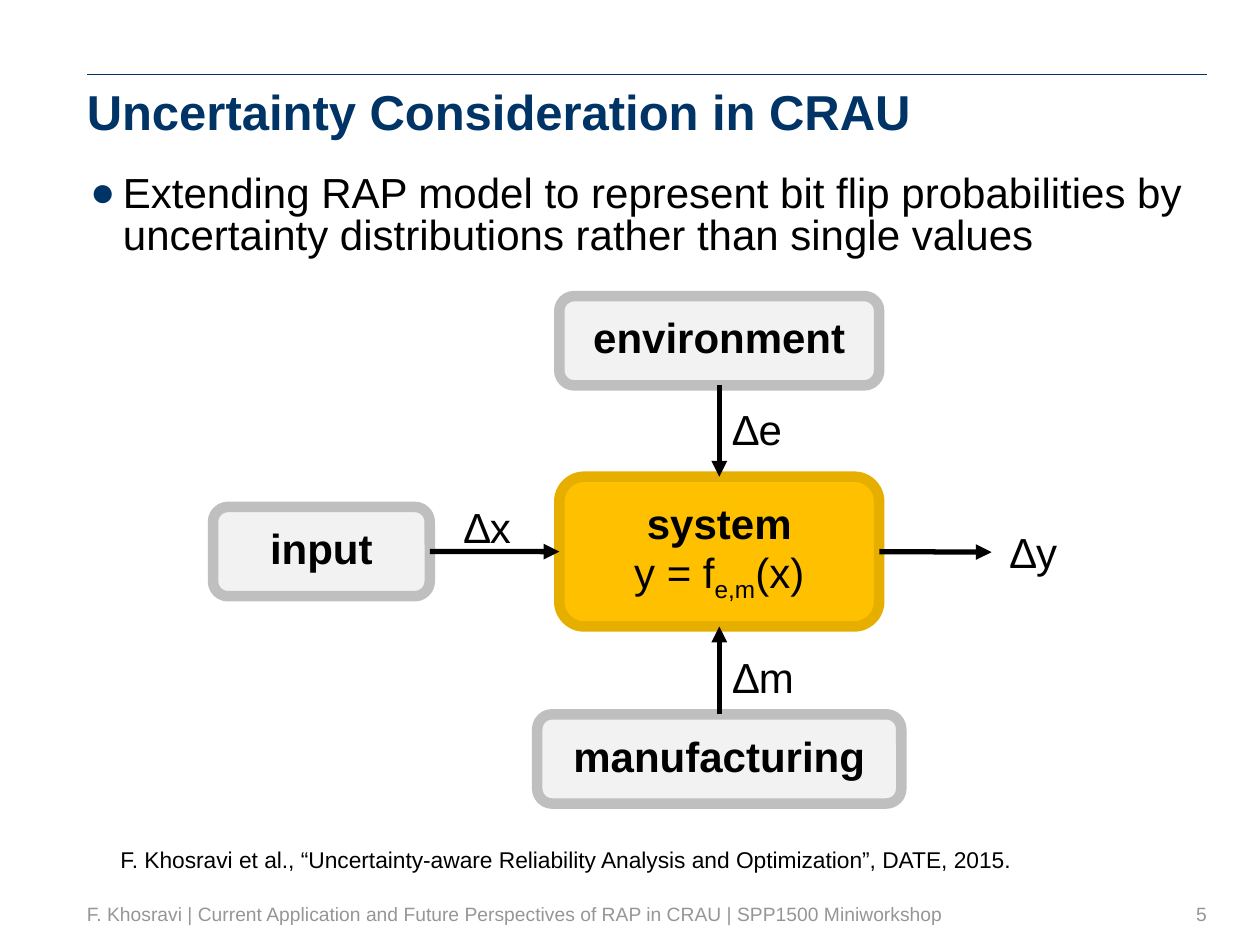
from lxml import etree
from pptx import Presentation
from pptx.dml.color import RGBColor
from pptx.enum.shapes import MSO_CONNECTOR, MSO_SHAPE
from pptx.enum.text import MSO_ANCHOR, PP_ALIGN
from pptx.oxml.ns import qn
from pptx.util import Cm, Pt

STRAIGHT = MSO_CONNECTOR.STRAIGHT
ROUNDED = MSO_SHAPE.ROUNDED_RECTANGLE
TOP, MIDDLE = MSO_ANCHOR.TOP, MSO_ANCHOR.MIDDLE
LEFT, CENTER, RIGHT = PP_ALIGN.LEFT, PP_ALIGN.CENTER, PP_ALIGN.RIGHT
SITES = {"top": 0, "left": 1, "bottom": 2, "right": 3}

COLORS = {
    "navy": "003366", "black": "000000", "footer": "969696",
    "gold": "FFC000", "gold edge": "E6AF00",
    "light": "F2F2F2", "light edge": "BFBFBF",
}

TITLE = "Uncertainty Consideration in CRAU"
BULLET = ("Extending RAP model to represent bit flip probabilities by "
          "uncertainty distributions rather than single values")
REFERENCE = ("F. Khosravi et al., “Uncertainty-aware Reliability Analysis "
             "and Optimization”, DATE, 2015.")
FOOTER = ("F. Khosravi | Current Application and Future Perspectives of RAP "
          "in CRAU | SPP1500 Miniworkshop")
PAGE_NUMBER = "5"

# Diagram in centimetres: centre x, centre y, width, height, colour
BOXES = {
    "environment": (14.5, 6.87, 6.45, 1.8, "light"),
    "system": (14.5, 11.12, 6.45, 3.02, "gold"),
    "input": (6.48, 11.12, 4.37, 1.8, "light"),
    "manufacturing": (14.5, 15.3, 7.34, 1.8, "light"),
}
FORMULA = [("y = f", False), ("e,m", True), ("(x)", False)]
ARROWS = [
    ("environment", "bottom", "system", "top"),
    ("input", "right", "system", "left"),
    ("manufacturing", "top", "system", "bottom"),
]
OUTPUT_END = (19.99, 11.13)
DELTAS = [  # text, left, top, width
    ("∆y", 19.99, 10.49, 1.7),
    ("∆e", 14.05, 8.0, 2.44),
    ("∆m", 14.17, 13.0, 2.44),
    ("∆x", 8.61, 9.98, 2.44),
]


def rgb(name):
    return RGBColor.from_string(COLORS[name])


def style(span, size, color="black", bold=False):
    span.font.name = "Arial"
    span.font.size = Pt(size)
    span.font.bold = bold
    span.font.color.rgb = rgb(color)


def place(shape, left, top, width, height):
    shape.left, shape.top = Cm(left), Cm(top)
    shape.width, shape.height = Cm(width), Cm(height)


def fill_text(shape, text, size, color="black", bold=False, align=LEFT,
              anchor=TOP, inset=True):
    """Write one styled paragraph and return it."""
    frame = shape.text_frame
    frame.word_wrap = True
    frame.vertical_anchor = anchor
    if not inset:
        frame.margin_left = frame.margin_right = 0
        frame.margin_top = frame.margin_bottom = 0
    frame.text = text
    para = frame.paragraphs[0]
    para.alignment = align
    style(para.runs[0], size, color, bold)
    return para


def add_text(page, area, text, size, **options):
    box = page.shapes.add_textbox(*map(Cm, area))
    return fill_text(box, text, size, **options)


def add_line(page, start, end, color, width, arrow=False):
    line = page.shapes.add_connector(STRAIGHT, *map(Cm, start + end))
    line.line.color.rgb = rgb(color)
    line.line.width = Pt(width)
    if arrow:
        etree.SubElement(line.line._get_or_add_ln(), qn("a:tailEnd"),
                         type="triangle")
    etree.SubElement(line._element.spPr, qn("a:effectLst"))
    return line


def add_bullet(para, color):
    properties = para._p.get_or_add_pPr()
    properties.set("marL", str(Cm(0.66)))
    properties.set("indent", str(Cm(-0.76)))
    bullet_color = etree.SubElement(properties, qn("a:buClr"))
    etree.SubElement(bullet_color, qn("a:srgbClr"), val=COLORS[color])
    etree.SubElement(properties, qn("a:buFont"), typeface="Arial")
    etree.SubElement(properties, qn("a:buChar"), char="●")


def add_box(page, name):
    x, y, width, height, color = BOXES[name]
    box = page.shapes.add_shape(ROUNDED, 0, 0, 0, 0)
    place(box, x - width / 2, y - height / 2, width, height)
    box.shadow.inherit = False
    box.fill.solid()
    box.fill.fore_color.rgb = rgb(color)
    box.line.color.rgb = rgb(color + " edge")
    box.line.width = Pt(6)
    para = fill_text(box, name, 24, bold=True, align=CENTER, anchor=MIDDLE)
    para.line_spacing = 0.87
    return box


def add_formula(box):
    para = box.text_frame.paragraphs[0]
    para.add_line_break()
    for text, subscript in FORMULA:
        span = para.add_run()
        span.text = text
        style(span, 24)
        if subscript:
            span.font._element.set("baseline", "-25000")


def add_diagram(page):
    boxes = {name: add_box(page, name) for name in BOXES}
    add_formula(boxes["system"])
    for source, exit_side, target, entry_side in ARROWS:
        arrow = add_line(page, (0, 0), (0, 0), "black", 3, arrow=True)
        arrow.begin_connect(boxes[source], SITES[exit_side])
        arrow.end_connect(boxes[target], SITES[entry_side])
    output = add_line(page, (0, 0), OUTPUT_END, "black", 3, arrow=True)
    output.begin_connect(boxes["system"], SITES["right"])
    for text, left, top, width in DELTAS:
        add_text(page, (left, top, width, 1.27), text, 24, align=CENTER)


def main():
    deck = Presentation()
    deck.slide_width, deck.slide_height = Cm(25.4), Cm(19.05)
    page = deck.slides.add_slide(deck.slide_layouts[5])

    add_line(page, (24.33, 1.5), (1.75, 1.5), "navy", 0.75)
    title = page.shapes.title
    place(title, 1.75, 1.85, 22.61, 1.07)
    para = fill_text(title, TITLE, 28, color="navy", bold=True, inset=False)
    para.line_spacing = Pt(28)

    para = add_text(page, (1.57, 3.4, 22.61, 2.3), BULLET, 24)
    para.line_spacing = Pt(24)
    para.space_after = Pt(12)
    add_bullet(para, "navy")

    add_diagram(page)

    add_text(page, (2.18, 16.92, 21.85, 0.81), REFERENCE, 13)
    small = {"color": "footer", "anchor": MIDDLE, "inset": False}
    add_text(page, (1.75, 17.81, 21.34, 1.24), FOOTER, 11, **small)
    add_text(page, (23.09, 17.81, 1.24, 1.24), PAGE_NUMBER, 11, align=RIGHT,
             **small)
    deck.save("out.pptx")


if __name__ == "__main__":
    main()
